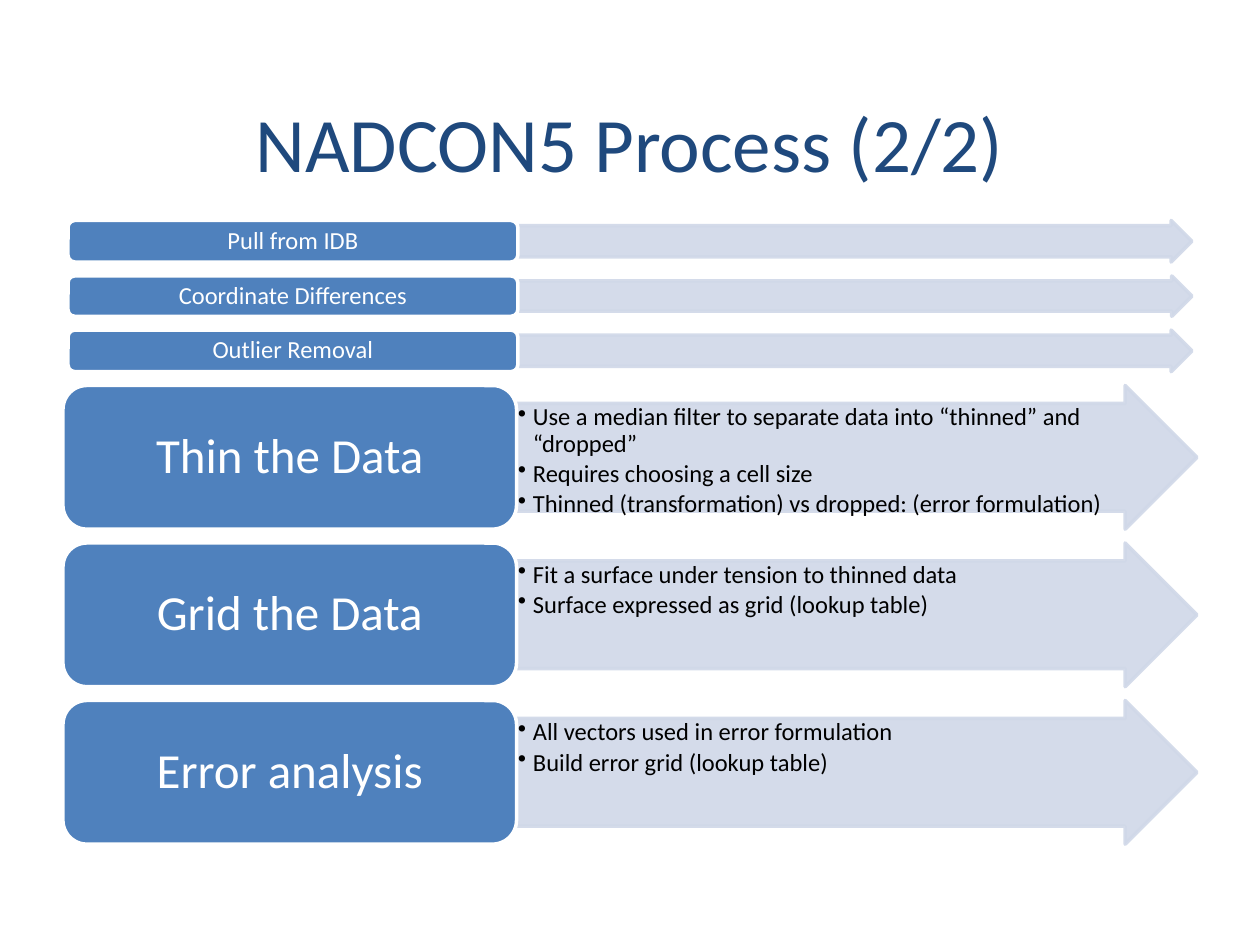
"""Build the NADCON5 process slide: six steps, each a label and an arrow."""
from lxml.etree import SubElement as Sub
from pptx import Presentation as Deck
from pptx.dml.color import RGBColor as Rgb
from pptx.enum.shapes import MSO_SHAPE as Kind
from pptx.enum.text import MSO_ANCHOR as Anchor, PP_ALIGN as Align
from pptx.oxml.ns import qn
from pptx.util import Inches, Pt

THEME = {
    "font": "Calibri", "title": "1F497D", "label": "4F81BD", "arrow": "D0D8E8",
    "white": "FFFFFF", "black": "000000", "head": 44, "big": 28, "small": 14,
}
COLS, ROWS = 100, 75
GAP = 1.1
STEPS = [
    ("Pull from IDB", 3.3, []),
    ("Coordinate Differences", 3.2, []),
    ("Outlier Removal", 3.3, []),
    ("Thin the Data", 11.4, [
        "Use a median filter to separate data into “thinned” and “dropped”",
        "Requires choosing a cell size",
        "Thinned (transformation) vs dropped: (error formulation)"]),
    ("Grid the Data", 11.4, [
        "Fit a surface under tension to thinned data",
        "Surface expressed as grid (lookup table)"]),
    ("Error analysis", 11.4, [
        "All vectors used in error formulation",
        "Build error grid (lookup table)"]),
]

deck = Deck()
deck.slide_width, deck.slide_height = Inches(10), Inches(7.5)
cell_w, cell_h = deck.slide_width / COLS, deck.slide_height / ROWS
slide = deck.slides.add_slide(deck.slide_layouts[6])


def add(kind, col, row, wide, high, fill, line):
    """Place a filled shape on the grid."""
    shape = slide.shapes.add_shape(
        kind, int(col * cell_w), int(row * cell_h), int(wide * cell_w), int(high * cell_h))
    shape.shadow.inherit = False
    shape.fill.solid()
    shape.fill.fore_color.rgb = Rgb.from_string(THEME[fill])
    shape.line.color.rgb = Rgb.from_string(THEME[line])
    shape.line.width = Pt(2)
    frame = shape.text_frame
    frame.word_wrap = True
    frame.margin_left = frame.margin_right = Inches(0.01)
    frame.margin_top = frame.margin_bottom = Inches(0.01)
    return shape


def style(para, size, color, align):
    """Set the type of one paragraph."""
    para.alignment = align
    para.font.name = THEME["font"]
    para.font.size = Pt(THEME[size])
    para.font.color.rgb = Rgb.from_string(THEME[color])


title = slide.shapes.add_textbox(
    int(5 * cell_w), int(5 * cell_h), int(90 * cell_w), int(12.5 * cell_h)).text_frame
title.word_wrap = True
title.vertical_anchor = Anchor.MIDDLE
title.text = "NADCON5 Process (2/2)"
style(title.paragraphs[0], "head", "title", Align.CENTER)

row = 17.5
for name, high, notes in STEPS:
    left, split, right = (5, 41, 95) if notes else (5.4, 41.1, 94.6)

    arrow = add(Kind.RIGHT_ARROW, split, row, right - split, high, "arrow", "arrow")
    arrow.adjustments[0] = 0.75
    for tint in list(arrow.element.spPr.iter(qn("a:srgbClr"))):
        Sub(tint, qn("a:alpha"), val="90000")
    if notes:
        frame = arrow.text_frame
        frame.margin_right = Inches(0.3)
        frame.vertical_anchor = Anchor.TOP
        frame.text = "\n".join(notes)
        for para in frame.paragraphs:
            props = para._p.get_or_add_pPr()
            props.set("marL", str(Inches(0.12)))
            props.set("indent", str(-Inches(0.12)))
            Sub(props, qn("a:buChar"), char="•")
            para.level = 1
            para.line_spacing = 0.9
            para.space_after = Pt(2.1)
            style(para, "small", "black", Align.LEFT)

    label = add(Kind.ROUNDED_RECTANGLE, left, row, split - left, high, "label", "white")
    label.text_frame.vertical_anchor = Anchor.MIDDLE
    label.text_frame.text = name
    para = label.text_frame.paragraphs[0]
    para.line_spacing = 0.9
    style(para, "big" if notes else "small", "white", Align.CENTER)
    row += high + GAP

deck.save("out.pptx")
